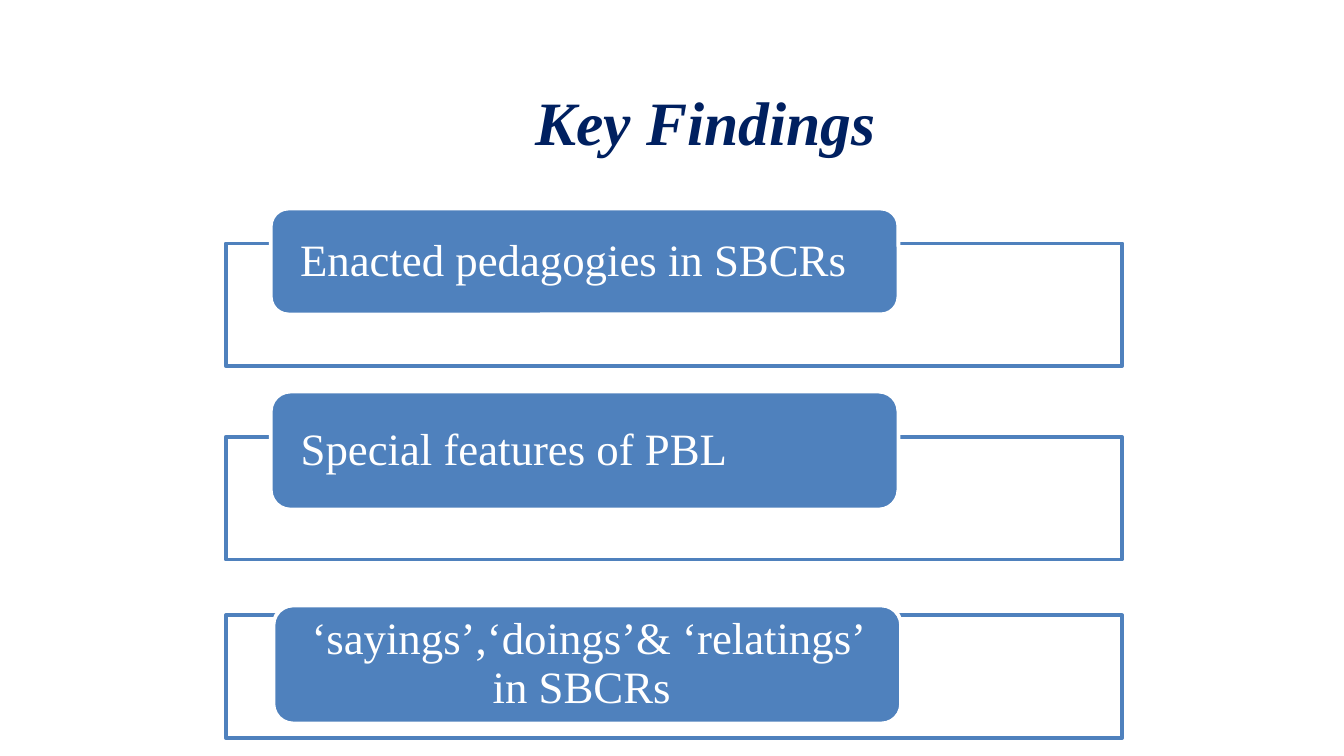
from dataclasses import dataclass

from lxml.etree import SubElement
from pptx import Presentation
from pptx.dml.color import RGBColor
from pptx.enum.shapes import MSO_SHAPE
from pptx.enum.text import MSO_ANCHOR, PP_ALIGN
from pptx.oxml.ns import qn
from pptx.util import Emu, Inches, Pt

COLORS = {"navy": "002060", "blue": "4F81BD", "white": "FFFFFF"}
FONT = "Times New Roman"

prs = Presentation()
prs.slide_width = Inches(10)
prs.slide_height = Emu(prs.slide_width * 9 // 16)


@dataclass(frozen=True)
class Area:
    """A rectangle in percent of the slide's width and height."""
    left: float
    top: float
    width: float
    height: float

    def emu(self) -> list[Emu]:
        w, h = prs.slide_width, prs.slide_height
        return [Emu(round(share * side / 100)) for share, side in
                ((self.left, w), (self.top, h), (self.width, w), (self.height, h))]


@dataclass(frozen=True)
class Finding:
    text: str
    frame_top: float
    label: Area
    align: PP_ALIGN = PP_ALIGN.LEFT


FINDINGS = [
    Finding("Enacted pedagogies in SBCRs", 32.2, Area(20.15, 27.6, 46.7, 14)),
    Finding("Special features of PBL", 57.8, Area(20.15, 51.8, 46.7, 15.6)),
    Finding("‘sayings’,‘doings’& ‘relatings’ in SBCRs ", 81.4,
            Area(20.35, 80.1, 46.7, 15.6), PP_ALIGN.CENTER),
]


def color(name: str) -> RGBColor:
    return RGBColor.from_string(COLORS[name])


def add_block(s, preset: MSO_SHAPE, area: Area, fill: str, line: str):
    sp = s.shapes.add_shape(preset, *area.emu())
    sp.shadow.inherit = False
    sp.fill.solid()
    sp.fill.fore_color.rgb = color(fill)
    sp.line.color.rgb = color(line)
    sp.line.width = Pt(2)
    return sp


def write(sp, text: str, size: float, name: str, align: PP_ALIGN,
          spacing: float, inset: float = 0):
    """Put one paragraph into a shape and return it."""
    tf = sp.text_frame
    tf.word_wrap = True
    tf.margin_left = tf.margin_right = Inches(inset)
    tf.margin_top = tf.margin_bottom = 0
    p = tf.paragraphs[0]
    p.text = text
    p.alignment = align
    p.line_spacing = spacing
    p.font.name = FONT
    p.font.size = Pt(size)
    p.font.color.rgb = color(name)
    return p


def add_title(s, text: str) -> None:
    box = s.shapes.add_textbox(*Area(10, 13, 85, 8.4).emu())
    p = write(box, text, 33, "navy", PP_ALIGN.CENTER, 0.8)
    p.font.bold = p.font.italic = True


def add_finding(s, finding: Finding) -> None:
    frame = add_block(s, MSO_SHAPE.RECTANGLE, Area(16.8, finding.frame_top, 66.7, 16.2),
                      "white", "blue")
    fill = frame.fill._xPr.find(qn("a:solidFill"))
    SubElement(fill[0], qn("a:alpha"), val="90000")
    label = add_block(s, MSO_SHAPE.ROUNDED_RECTANGLE, finding.label, "blue", "white")
    label.text_frame.vertical_anchor = MSO_ANCHOR.MIDDLE
    write(label, finding.text, 24, "white", finding.align, 0.9, inset=0.18)


def main() -> None:
    s = prs.slides.add_slide(prs.slide_layouts[6])
    add_title(s, "Key Findings")
    for finding in FINDINGS:
        add_finding(s, finding)
    prs.save("out.pptx")


if __name__ == "__main__":
    main()
